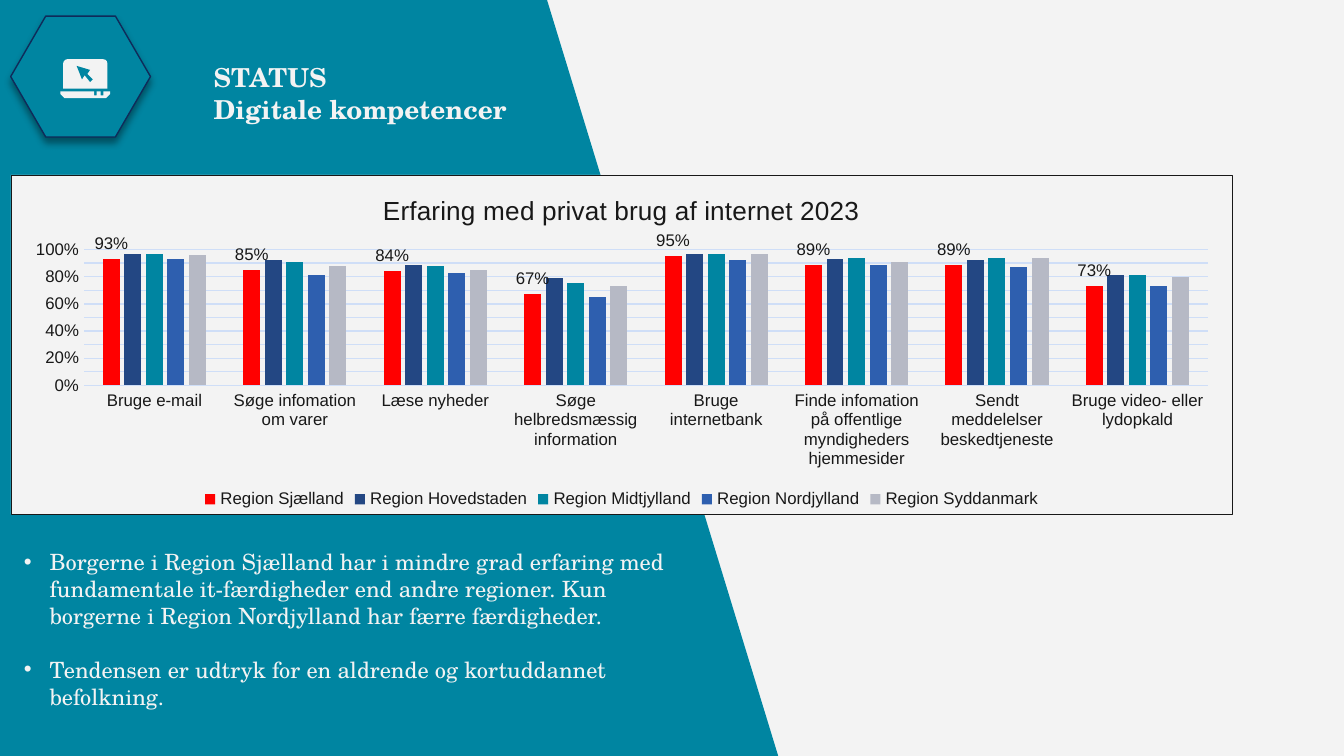
from lxml import etree
from pptx import Presentation
from pptx import util as u
from pptx.chart.data import CategoryChartData
from pptx.dml.color import RGBColor
from pptx.enum import chart as charts, shapes, text
from pptx.oxml import parse_xml
from pptx.oxml.ns import nsdecls, qn

TEAL, PAPER, INK, GRID, NAVY = "0085A1", "F3F3F3", "181818", "CFDEF7", "0F2B5A"
SERIF, SANS = "TeX Gyre Schola", "Arial"

CATEGORIES = [
    "Bruge e-mail", "Søge infomation om varer", "Læse nyheder",
    "Søge helbredsmæssig information", "Bruge internetbank",
    "Finde infomation på offentlige myndigheders hjemmesider",
    "Sendt meddelelser beskedtjeneste", "Bruge video- eller lydopkald",
]
REGIONS = [
    ("Region Sjælland", "FF0000", (0.93, 0.85, 0.84, 0.67, 0.95, 0.89, 0.89, 0.73)),
    ("Region Hovedstaden", "234783", (0.97, 0.92, 0.89, 0.79, 0.97, 0.93, 0.92, 0.81)),
    ("Region Midtjylland", TEAL, (0.97, 0.91, 0.88, 0.75, 0.97, 0.94, 0.94, 0.81)),
    ("Region Nordjylland", "2E5FAF", (0.93, 0.81, 0.83, 0.65, 0.92, 0.89, 0.87, 0.73)),
    ("Region Syddanmark", "B6B9C5", (0.96, 0.88, 0.85, 0.73, 0.97, 0.91, 0.94, 0.80)),
]
FINDINGS = [
    "Borgerne i Region Sjælland har i mindre grad erfaring med fundamentale "
    "it-færdigheder end andre regioner. Kun borgerne i Region Nordjylland har "
    "færre færdigheder.",
    "Tendensen er udtryk for en aldrende og kortuddannet befolkning.",
]


def color(value):
    return RGBColor.from_string(value)


def set_values(target, **values):
    for name, value in values.items():
        setattr(target, name, value)


def set_font(font, size, value, name, bold=False):
    set_values(font, size=u.Pt(size), name=name, bold=bold)
    font.color.rgb = color(value)


def paint(shape, fill):
    shape.shadow.inherit = False
    shape.fill.solid()
    shape.fill.fore_color.rgb = color(fill)
    shape.line.fill.background()
    return shape


def add_preset(slide, kind, box, fill):
    return paint(slide.shapes.add_shape(kind, *map(u.Inches, box)), fill)


def add_polygon(slide, left, top, points, fill):
    corners = [(u.Inches(left + x), u.Inches(top + y)) for x, y in points]
    builder = slide.shapes.build_freeform(*corners[0])
    builder.add_line_segments(corners[1:], close=True)
    return paint(builder.convert_to_shape(), fill)


def add_backdrop(slide, width, height):
    slide.background.fill.solid()
    slide.background.fill.fore_color.rgb = color(PAPER)
    add_polygon(slide, 0, 0, [(0, 0), (width - 1.72, 0), (width, height), (0, height)], TEAL)


def add_laptop(slide, left, top):
    screen = add_preset(slide, shapes.MSO_SHAPE.ROUND_2_SAME_RECTANGLE,
                        (left + 0.02, top, 0.33, 0.22), PAPER)
    screen.adjustments[0] = 0.15
    pointer = [(0.12, 0.05), (0.22, 0.08), (0.2, 0.11), (0.24, 0.15),
               (0.22, 0.17), (0.18, 0.12), (0.16, 0.15)]
    add_polygon(slide, left, top, pointer, TEAL)
    base = [(0, 0), (0.25, 0), (0.25, 0.03), (0.27, 0.03), (0.27, 0), (0.3, 0),
            (0.3, 0.03), (0.32, 0.03), (0.32, 0), (0.37, 0), (0.37, 0.02),
            (0.34, 0.05), (0.03, 0.05), (0, 0.02)]
    add_polygon(slide, left, top + 0.24, base, PAPER)


def add_badge(slide, left, top, width, height):
    hexagon = add_preset(slide, shapes.MSO_SHAPE.HEXAGON, (left, top, width, height), TEAL)
    hexagon.adjustments[0] = 0.29
    hexagon.line.color.rgb = color(NAVY)
    hexagon.line.width = u.Pt(0.75)
    effects = hexagon._element.spPr.find(qn("a:effectLst"))
    shadow = etree.SubElement(effects, qn("a:outerShdw"), blurRad=str(u.Pt(4)),
                              dist=str(u.Pt(3)), dir="5400000", rotWithShape="0")
    shade = etree.SubElement(shadow, qn("a:srgbClr"), val="000000")
    etree.SubElement(shade, qn("a:alpha"), val="40000")
    add_laptop(slide, left + 0.37, top + 0.32)


def add_heading(slide, left, top, width, height):
    title = slide.shapes.title
    slide.shapes._spTree.append(title._element)  # bring in front of the backdrop
    set_values(title, left=u.Inches(left), top=u.Inches(top),
               width=u.Inches(width), height=u.Inches(height))
    frame = title.text_frame
    frame.text = "STATUS\nDigitale kompetencer"
    set_values(frame, word_wrap=True, auto_size=text.MSO_AUTO_SIZE.NONE,
               vertical_anchor=text.MSO_ANCHOR.TOP)
    for paragraph in frame.paragraphs:
        paragraph.alignment = text.PP_ALIGN.LEFT
        set_font(paragraph.font, 14, PAPER, SERIF, bold=True)


def add_findings(slide, left, top, width, height):
    box = slide.shapes.add_textbox(*map(u.Inches, (left, top, width, height)))
    frame = box.text_frame
    frame.text = "\n".join(FINDINGS)
    inset = u.Inches(0.1)
    set_values(frame, word_wrap=True, margin_left=inset, margin_right=inset,
               margin_top=inset, margin_bottom=inset)
    for index, paragraph in enumerate(frame.paragraphs):
        properties = paragraph._p.get_or_add_pPr()
        properties.set("marL", str(u.Inches(0.19)))
        properties.set("indent", str(-u.Inches(0.19)))
        bullet_color = etree.SubElement(properties, qn("a:buClr"))
        etree.SubElement(bullet_color, qn("a:srgbClr"), val=PAPER)
        etree.SubElement(properties, qn("a:buFont"), typeface=SANS)
        etree.SubElement(properties, qn("a:buChar"), char="•")
        if index:
            paragraph.space_before = u.Pt(14.4)
        set_font(paragraph.font, 12, PAPER, SERIF)


def frame_chart(chart):
    """Fill and outline the chart, and fix the place of its plot area."""
    chart._chartSpace.find(qn("c:txPr")).addprevious(parse_xml(
        f'<c:spPr {nsdecls("c", "a")}>'
        f'<a:solidFill><a:srgbClr val="{PAPER}"/></a:solidFill>'
        f'<a:ln w="{u.Pt(0.25)}"><a:solidFill><a:srgbClr val="{INK}"/></a:solidFill></a:ln>'
        '</c:spPr>'))
    plot_area = chart._chartSpace.chart.plotArea
    for layout in plot_area.findall(qn("c:layout")):
        plot_area.remove(layout)
    places = "".join(f'<c:{name} val="{value}"/>' for name, value in
                     (("x", 0.06), ("y", 0.22), ("w", 0.92), ("h", 0.4)))
    plot_area.insert(0, parse_xml(
        f'<c:layout {nsdecls("c")}><c:manualLayout><c:layoutTarget val="inner"/>'
        f'<c:xMode val="edge"/><c:yMode val="edge"/>{places}</c:manualLayout></c:layout>'))


def style_axes(chart):
    for axis in (chart.category_axis, chart.value_axis):
        set_values(axis, major_tick_mark=charts.XL_TICK_MARK.NONE,
                   minor_tick_mark=charts.XL_TICK_MARK.NONE)
        set_font(axis.tick_labels.font, 9, INK, SANS)
    values = chart.value_axis
    set_values(values, minimum_scale=0, maximum_scale=1, major_unit=0.1,
               has_major_gridlines=True)
    set_values(values.tick_labels, number_format="0%", number_format_is_linked=False)
    values.format.line.fill.background()
    for line in (chart.category_axis.format.line, values.major_gridlines.format.line):
        line.color.rgb = color(GRID)
        line.width = u.Pt(0.75)


def add_usage_chart(slide, left, top, width, height):
    data = CategoryChartData(number_format="0%")
    data.categories = CATEGORIES
    for name, _, values in REGIONS:
        data.add_series(name, values)
    chart = slide.shapes.add_chart(charts.XL_CHART_TYPE.COLUMN_CLUSTERED,
                                   *map(u.Inches, (left, top, width, height)), data).chart
    set_font(chart.font, 10, INK, SANS)
    frame_chart(chart)
    style_axes(chart)
    title = chart.chart_title.text_frame
    title.text = "Erfaring med privat brug af internet 2023"
    set_font(title.paragraphs[0].font, 14, INK, SANS)
    chart.has_legend = True
    set_values(chart.legend, position=charts.XL_LEGEND_POSITION.BOTTOM,
               include_in_layout=False)
    set_font(chart.legend.font, 9, INK, SANS)
    plot = chart.plots[0]
    set_values(plot, gap_width=219, overlap=-27, vary_by_categories=False)
    for series, (_, fill, _) in zip(plot.series, REGIONS):
        series.format.fill.solid()
        series.format.fill.fore_color.rgb = color(fill)
    labels = plot.series[0].data_labels
    set_values(labels, show_value=True, number_format="0%", number_format_is_linked=False,
               position=charts.XL_LABEL_POSITION.OUTSIDE_END)
    set_font(labels.font, 9, INK, SANS)


def main():
    presentation = Presentation()
    width = u.Inches(10)
    set_values(presentation, slide_width=width, slide_height=u.Emu(width * 9 // 16))
    slide = presentation.slides.add_slide(presentation.slide_layouts[5])
    add_backdrop(slide, 5.79, presentation.slide_height.inches)
    add_badge(slide, 0.08, 0.12, 1.04, 0.9)
    add_heading(slide, 1.49, 0.41, 2.45, 0.57)
    add_findings(slide, 0.08, 3.98, 5.12, 1.34)
    add_usage_chart(slide, 0.08, 1.3, 9.09, 2.53)
    presentation.save("out.pptx")


if __name__ == "__main__":
    main()
